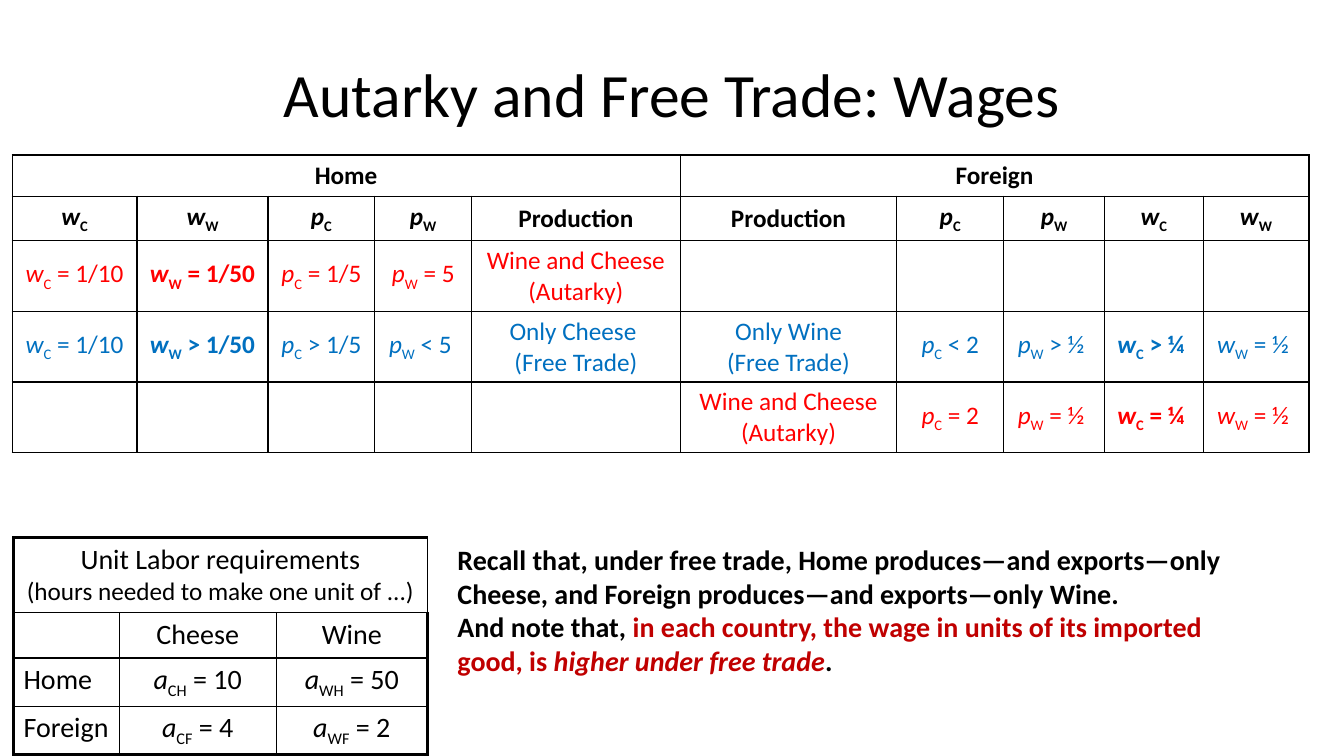
from lxml import etree
from pptx import Presentation
from pptx.dml.color import RGBColor
from pptx.enum.text import MSO_ANCHOR, PP_ALIGN
from pptx.oxml.ns import qn
from pptx.util import Inches, Pt

CENTER, LEFT = PP_ALIGN.CENTER, PP_ALIGN.LEFT
TOP, MIDDLE = MSO_ANCHOR.TOP, MSO_ANCHOR.MIDDLE

WIDTH, HEIGHT = Inches(13.33), Inches(7.5)
FONT = "Calibri"
BLACK, RED, BLUE, DARK_RED = "000000", "FF0000", "0070C0", "C00000"
THIN, THICK = 1, 2.25

WAGE_ROWS = [
    ["Home", "", "", "", "", "Foreign", "", "", "", ""],
    ["w_C", "w_W", "p_C", "p_W", "Production",
     "Production", "p_C", "p_W", "w_C", "w_W"],
    ["w_C = 1/10", "w_W = 1/50", "p_C = 1/5", "p_W = 5",
     "Wine and Cheese\n(Autarky)", "", "", "", "", ""],
    ["w_C = 1/10", "w_W > 1/50", "p_C > 1/5", "p_W < 5 ",
     "Only Cheese \n(Free Trade)", "Only Wine\n(Free Trade)",
     "p_C < 2", "p_W > ½ ", "w_C > ¼ ", "w_W = ½ "],
    ["", "", "", "", "", "Wine and Cheese\n(Autarky)",
     "p_C = 2", "p_W = ½ ", "w_C = ¼ ", "w_W = ½ "],
]
WAGE_COLORS = [BLACK, BLACK, RED, BLUE, RED]
IMPORT_WAGE_COLUMNS = (1, 8)

LABOR_ROWS = [
    ["Unit Labor requirements\n(hours needed to make one unit of ...)", "", ""],
    ["", "Cheese", "Wine"],
    ["Home", "a_CH = 10", "a_WH = 50"],
    ["Foreign", "a_CF = 4", "a_WF = 2"],
]


def color(hex_string):
    return RGBColor.from_string(hex_string)


def box(left, top, width, height):
    return (round(WIDTH * left), round(HEIGHT * top),
            round(WIDTH * width), round(HEIGHT * height))


def format_font(font, size, hex_string, bold=False):
    font.name = FONT
    font.size = Pt(size)
    font.bold = bold
    font.color.rgb = color(hex_string)


def add_run(paragraph, text, italic=False, subscript=False):
    run = paragraph.add_run()
    run.text = text
    if italic:
        run.font.italic = True
    if subscript:
        run.font._element.set("baseline", "-25000")
    return run


def write_label(paragraph, text):
    symbol, underscore, rest = text.partition("_")
    if underscore:
        index, space, value = rest.partition(" ")
        add_run(paragraph, symbol, italic=True)
        add_run(paragraph, index, subscript=True)
        if value:
            add_run(paragraph, space + value)
    elif text:
        for number, line in enumerate(text.split("\n")):
            if number:
                paragraph.add_line_break()
            add_run(paragraph, line)


def set_borders(cell, widths):
    properties = cell._tc.get_or_add_tcPr()
    for position, (side, width) in enumerate(zip("LRTB", widths)):
        line = etree.Element(qn(f"a:ln{side}"), w=str(Pt(width)))
        fill = etree.SubElement(line, qn("a:solidFill"))
        etree.SubElement(fill, qn("a:srgbClr"), val=BLACK)
        properties.insert(position, line)


def add_grid(slide, rows, place, column_weights, row_weights, outline):
    left, top, width, height = box(*place)
    table = slide.shapes.add_table(
        len(rows), len(rows[0]), left, top, width, height).table
    table.first_row = table.horz_banding = False
    for column, weight in zip(table.columns, column_weights):
        column.width = round(width * weight / sum(column_weights))
    for row, weight in zip(table.rows, row_weights):
        row.height = round(height * weight / sum(row_weights))
    last_row, last_column = len(rows) - 1, len(rows[0]) - 1
    for r, texts in enumerate(rows):
        for c, text in enumerate(texts):
            cell = table.cell(r, c)
            cell.fill.background()
            edges = (c == 0, c == last_column, r == 0, r == last_row)
            set_borders(cell, [outline if edge else THIN for edge in edges])
            write_label(cell.text_frame.paragraphs[0], text)
    return table


def format_cell(cell, size, hex_string, bold, alignment, anchor):
    paragraph = cell.text_frame.paragraphs[0]
    paragraph.alignment = alignment
    format_font(paragraph.font, size, hex_string, bold)
    cell.vertical_anchor = anchor


def add_title(slide, text):
    title = slide.shapes.title
    title.left, title.top, title.width, title.height = box(0.05, 0.04, 0.9, 0.167)
    title.text_frame.text = text
    title.text_frame.vertical_anchor = MIDDLE
    paragraph = title.text_frame.paragraphs[0]
    paragraph.alignment = CENTER
    format_font(paragraph.font, 44, BLACK)


def add_wage_table(slide):
    table = add_grid(slide, WAGE_ROWS, (0.009, 0.205, 0.965, 0.393),
                     [1.24, 1.3, 1.06, 0.96, 2.07, 2.15, 1.06, 1, 0.98, 1.05],
                     [0.41, 0.44, 0.7, 0.7, 0.7], THIN)
    for r, hex_string in enumerate(WAGE_COLORS):
        for c in range(len(WAGE_ROWS[r])):
            bold = r < 2 or c in IMPORT_WAGE_COLUMNS
            format_cell(table.cell(r, c), 18, hex_string, bold, CENTER,
                        MIDDLE if r else TOP)
    for first in (0, 5):
        table.cell(0, first).merge(table.cell(0, first + 4))


def add_labor_table(slide):
    table = add_grid(slide, LABOR_ROWS, (0.01, 0.711, 0.308, 0.286),
                     [1.05, 1.56, 1.5], [0.74, 0.45, 0.48, 0.48], THICK)
    for r, texts in enumerate(LABOR_ROWS):
        for c in range(len(texts)):
            alignment = LEFT if r and c == 0 else CENTER
            format_cell(table.cell(r, c), 20, BLACK, False, alignment, TOP)
    heading = table.cell(0, 0)
    heading.text_frame.paragraphs[0].runs[1].font.size = Pt(18)
    heading.merge(table.cell(0, 2))


def add_note(slide):
    frame = slide.shapes.add_textbox(*box(0.333, 0.711, 0.602, 0.193)).text_frame
    frame.word_wrap = True
    recall, remark = frame.paragraphs[0], frame.add_paragraph()
    for paragraph in (recall, remark):
        format_font(paragraph.font, 20, BLACK, True)
    add_run(recall, "Recall that, under free trade, Home produces—and exports—only "
                    "Cheese, and Foreign produces—and exports—only Wine.")
    add_run(remark, "And note that, ")
    finding = add_run(
        remark, "in each country, the wage in units of its imported good, is ")
    emphasis = add_run(remark, "higher under free trade", italic=True)
    for run in (finding, emphasis):
        run.font.color.rgb = color(DARK_RED)
    add_run(remark, ".")


def main():
    presentation = Presentation()
    presentation.slide_width, presentation.slide_height = WIDTH, HEIGHT
    slide = presentation.slides.add_slide(presentation.slide_layouts[5])
    add_title(slide, "Autarky and Free Trade: Wages")
    add_labor_table(slide)
    add_note(slide)
    add_wage_table(slide)
    presentation.save("out.pptx")


if __name__ == "__main__":
    main()
